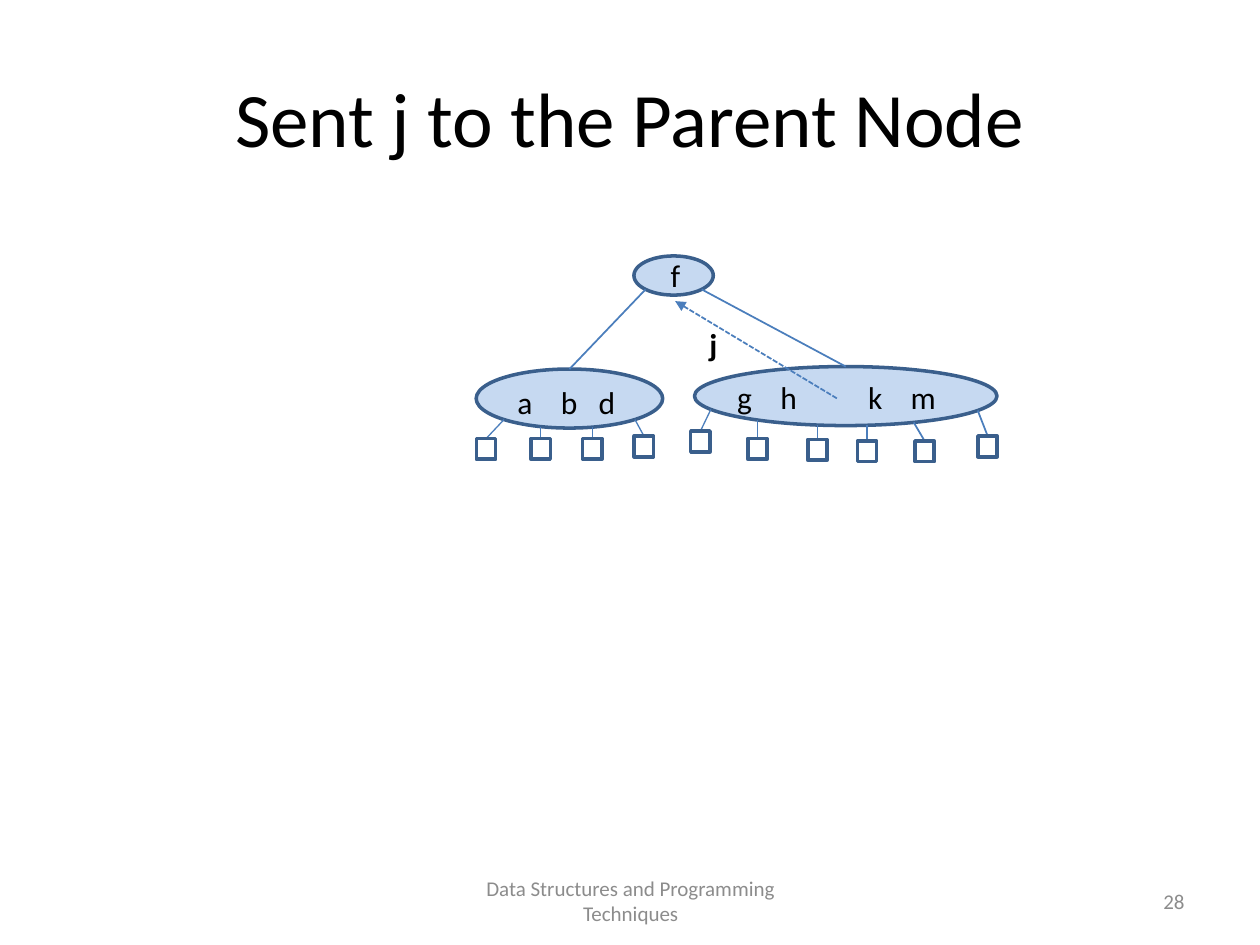
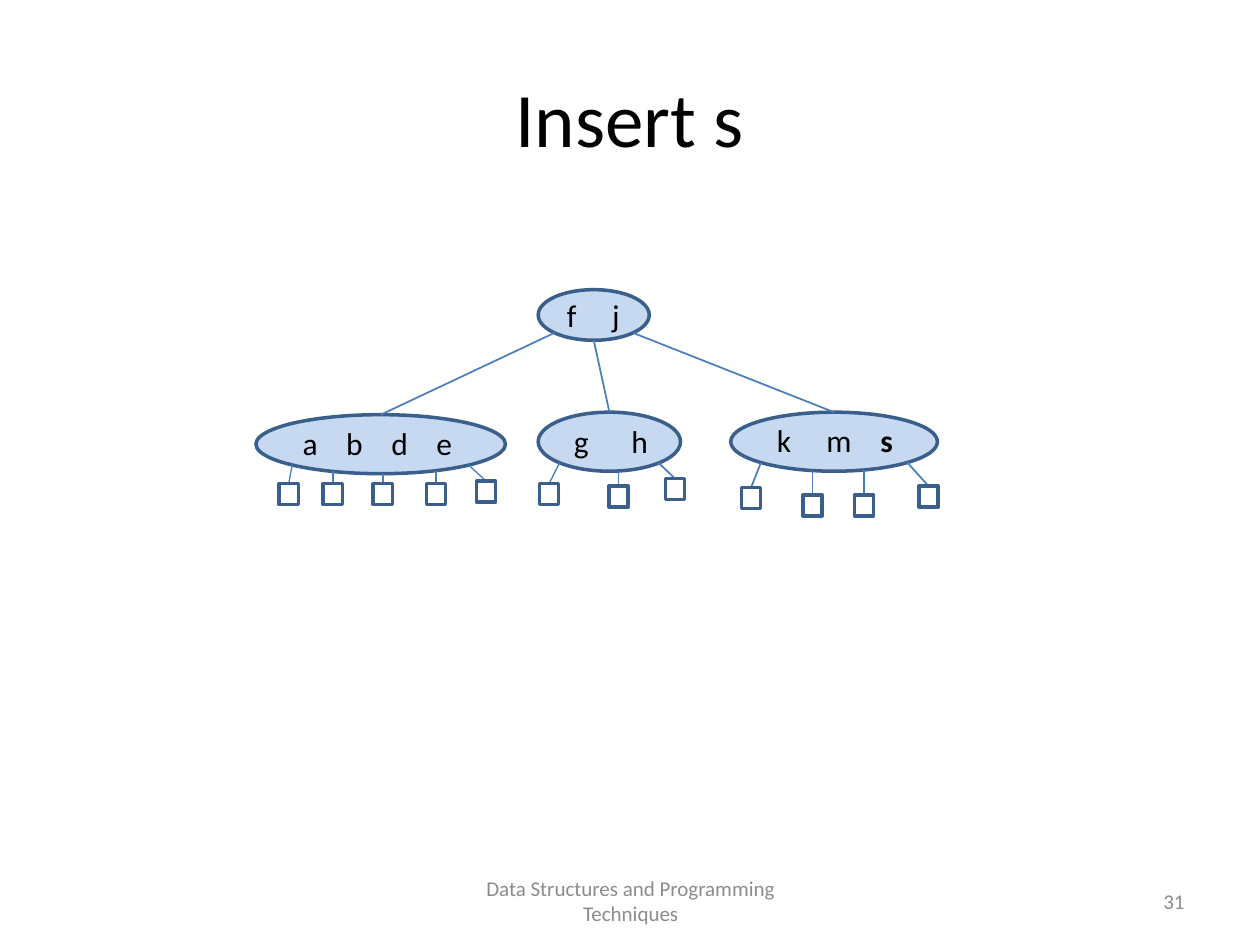
import math

from lxml import etree
from pptx import Presentation
from pptx.dml.color import RGBColor
from pptx.enum import dml, shapes, text
from pptx.oxml import ns
from pptx.util import Cm, Pt

FONT = "Calibri"
BLACK = RGBColor(0x00, 0x00, 0x00)
GREY = RGBColor(0x8C, 0x8C, 0x8C)
NODE_FILL = RGBColor(0xC6, 0xD9, 0xF1)
OUTLINE = RGBColor(0x3A, 0x5F, 0x8C)
EDGE = RGBColor(0x4B, 0x7E, 0xBC)

# All lengths are in centimetres
FOOTER = "Data Structures and Programming Techniques"
TITLE_BOX = (1.27, 0.76, 22.86, 3.18)
FOOTER_BOX = (8.69, 17.65, 8.05, 1.02)
NUMBER_BOX = (18.21, 17.65, 5.92, 1.02)
LABEL_H = 1.02
LEAF_W, LEAF_H = 0.39, 0.42

# oval: left, top, width, height; label: left, top, width
# keys: letter, left edge
# leaves: x on the oval, centre x of the box, top of the box
# thin: how many of the first leaves hang on a thin line
SLIDES = [
    dict(
        title="Sent j to the Parent Node", number="28",
        root=dict(oval=(12.78, 5.16, 1.6, 0.79), label=(12.93, 5.03, 1.37),
                  keys=[("f", 13.52)]),
        exits=(-1, 1),
        children=[
            dict(oval=(9.6, 7.44, 3.76, 1.19), label=(10.03, 7.59, 2.77),
                 keys=[("a", 10.43), ("b", 11.31), ("d", 12.07)], thin=4,
                 leaves=[(10.16, 9.8, 8.84), (10.9, 10.9, 8.84),
                         (11.94, 11.94, 8.84), (12.8, 12.98, 8.79)]),
            dict(oval=(14, 7.39, 6.1, 1.19), label=(13.92, 7.49, 5.89),
                 keys=[("g", 14.86), ("h", 15.73), ("k", 17.5), ("m", 18.36)], thin=1,
                 leaves=[(14.33, 14.12, 8.69), (15.27, 15.27, 8.84),
                         (16.48, 16.48, 8.86), (17.48, 17.48, 8.89),
                         (18.42, 18.64, 8.89), (19.71, 19.91, 8.79)]),
        ],
        moved=dict(label=(13.69, 6.43, 1.37), keys=[("j", 14.3)],
                   arrow=((16.87, 8.03), (13.61, 6.07))),
    ),
    dict(
        title="Insert s", number="31", new_key="s",
        root=dict(oval=(10.85, 5.84, 2.24, 1.02), label=(10.95, 5.84, 2.03),
                  keys=[("f", 11.43), ("j", 12.34)]),
        exits=(-1, 0, 1),
        children=[
            dict(oval=(5.16, 8.36, 5.03, 1.19), label=(5.46, 8.43, 4.29),
                 keys=[("a", 6.1), ("b", 6.98), ("d", 7.89), ("e", 8.8)], thin=5,
                 leaves=[(5.89, 5.82, 9.75), (6.71, 6.71, 9.75),
                         (7.72, 7.72, 9.75), (8.79, 8.79, 9.75), (9.45, 9.8, 9.7)]),
            dict(oval=(10.85, 8.31, 2.87, 1.19), label=(10.72, 8.38, 3.2),
                 keys=[("g", 11.57), ("h", 12.73)], thin=1,
                 leaves=[(11.28, 11.07, 9.75), (12.47, 12.47, 9.8),
                         (13.28, 13.61, 9.65)]),
            dict(oval=(14.73, 8.31, 4.17, 1.19), label=(14.63, 8.36, 4.39),
                 keys=[("k", 15.66), ("m", 16.66), ("s", 17.75)], thin=0,
                 leaves=[(15.34, 15.14, 9.83), (16.38, 16.38, 9.98),
                         (17.42, 17.42, 9.98), (18.29, 18.72, 9.8)]),
        ],
    ),
]


def style_run(r, size, color, bold=False):
    r.font.name, r.font.size = FONT, Pt(size)
    r.font.color.rgb, r.font.bold = color, bold


def add_text(s, box, words, size, color, align):
    tf = s.shapes.add_textbox(*map(Cm, box)).text_frame
    tf.word_wrap = True
    tf.vertical_anchor = text.MSO_ANCHOR.MIDDLE
    tf.text = words
    p = tf.paragraphs[0]
    p.alignment = align
    style_run(p.runs[0], size, color)


def add_keys(s, label, keys, bold_key=None):
    """Write the keys on one line, each at its own tab stop."""
    left, top, width = label
    first_x = keys[0][1]
    tf = s.shapes.add_textbox(Cm(left), Cm(top), Cm(width), Cm(LABEL_H)).text_frame
    tf.word_wrap = False
    tf.margin_left, tf.margin_right = Cm(first_x - left), 0
    p = tf.paragraphs[0]
    p.alignment = text.PP_ALIGN.LEFT
    stops = etree.SubElement(p._p.get_or_add_pPr(), ns.qn("a:tabLst"))
    for i, (key, x) in enumerate(keys):
        if i:
            etree.SubElement(stops, ns.qn("a:tab"), pos=str(Cm(x - first_x)), algn="l")
        r = p.add_run()
        r.text = "\t" + key if i else key
        style_run(r, 18, BLACK, key == bold_key)


def add_outlined(s, kind, box, fill=None):
    sp = s.shapes.add_shape(kind, *map(Cm, box))
    sp.shadow.inherit = False
    if fill is None:
        sp.fill.background()
    else:
        sp.fill.solid()
        sp.fill.fore_color.rgb = fill
    sp.line.color.rgb, sp.line.width = OUTLINE, Pt(2)


def add_line(s, start, end, width=1.0):
    line = s.shapes.add_connector(shapes.MSO_CONNECTOR.STRAIGHT, *map(Cm, start + end))
    line.line.color.rgb, line.line.width = EDGE, Pt(width)
    etree.SubElement(line._element.spPr, ns.qn("a:effectLst"))
    return line


def lower_edge(oval, x):
    """Point on the lower half of the oval at the given x."""
    left, top, width, height = oval
    offset = (x - left - width / 2) / (width / 2)
    return x, top + height / 2 * (1 + math.sqrt(1 - offset ** 2))


def add_node(s, node, bold_key):
    add_outlined(s, shapes.MSO_SHAPE.OVAL, node["oval"], NODE_FILL)
    add_keys(s, node["label"], node["keys"], bold_key)
    for i, (x, leaf_x, leaf_top) in enumerate(node.get("leaves", [])):
        add_line(s, lower_edge(node["oval"], x), (leaf_x, leaf_top),
                 0.75 if i < node["thin"] else 1)
        add_outlined(s, shapes.MSO_SHAPE.RECTANGLE,
                     (leaf_x - LEAF_W / 2, leaf_top, LEAF_W, LEAF_H))


def add_tree(s, data):
    root = data["root"]
    for node in [root] + data["children"]:
        add_node(s, node, data.get("new_key"))
    # Edges leave the root at 45 degrees or straight down
    left, _, width, _ = root["oval"]
    for side, child in zip(data["exits"], data["children"]):
        x = left + width / 2 * (1 + side * math.sqrt(0.5))
        child_left, child_top, child_width, _ = child["oval"]
        add_line(s, lower_edge(root["oval"], x), (child_left + child_width / 2, child_top))


def add_moved_key(s, moved):
    arrow = add_line(s, *moved["arrow"])
    arrow.line.dash_style = dml.MSO_LINE.SQUARE_DOT
    etree.SubElement(arrow.line._get_or_add_ln(), ns.qn("a:tailEnd"), type="triangle")
    add_keys(s, moved["label"], moved["keys"], moved["keys"][0][0])


def main():
    prs = Presentation()
    prs.slide_width, prs.slide_height = Cm(25.4), Cm(19.05)
    align = text.PP_ALIGN
    for data in SLIDES:
        s = prs.slides.add_slide(prs.slide_layouts[6])
        # Title and footer
        add_text(s, TITLE_BOX, data["title"], 44, BLACK, align.CENTER)
        add_text(s, FOOTER_BOX, FOOTER, 12, GREY, align.CENTER)
        add_text(s, NUMBER_BOX, data["number"], 12, GREY, align.RIGHT)
        # Tree
        add_tree(s, data)
        if "moved" in data:
            add_moved_key(s, data["moved"])
    prs.save("out.pptx")


if __name__ == "__main__":
    main()
